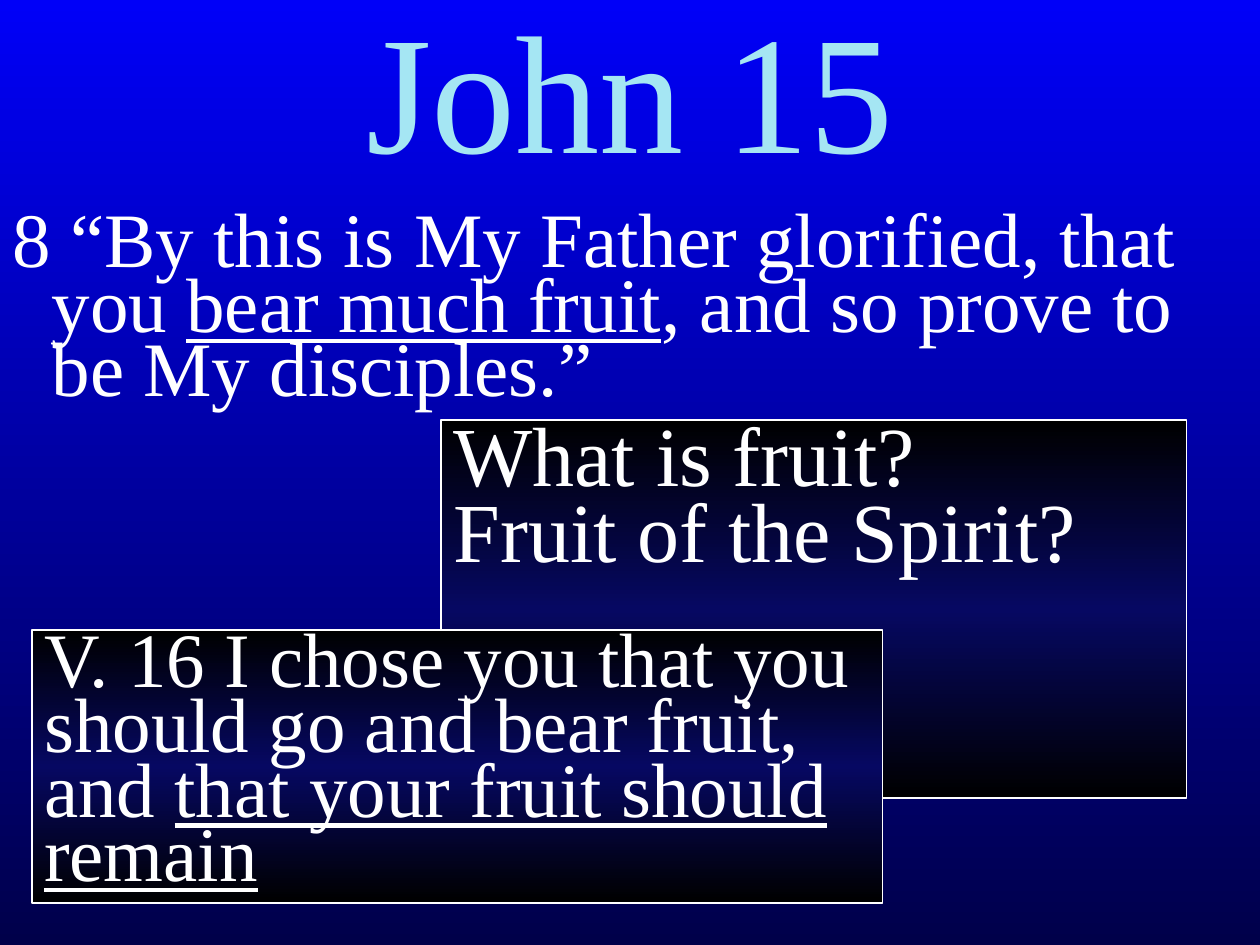
from copy import deepcopy

from pptx import Presentation
from pptx import util as u
from pptx.dml.color import RGBColor
from pptx.enum import shapes, text

WHITE = RGBColor(0xFF, 0xFF, 0xFF)
BLACK = RGBColor(0x00, 0x00, 0x00)
NAVY = RGBColor(0x06, 0x08, 0x62)
PALE_CYAN = RGBColor(0xA5, 0xE6, 0xF3)
SKY_TOP = RGBColor(0x00, 0x00, 0xF8)
SKY_BOTTOM = RGBColor(0x00, 0x00, 0x4A)
FONT = "Times New Roman"


def shade(fill, colours):
    """Fill from top to bottom with evenly spaced colours."""
    fill.gradient()
    fill.gradient_angle = 270
    stop_list = fill._fill._gradFill.gsLst
    while len(stop_list) < len(colours):
        stop_list.append(deepcopy(stop_list[-1]))
    for index, (stop, colour) in enumerate(zip(fill.gradient_stops, colours)):
        stop.position = index / (len(colours) - 1)
        stop.color.rgb = colour


def write(box, paragraphs, size, spacing, colour=WHITE, before=0,
          align=text.PP_ALIGN.LEFT, anchor=text.MSO_ANCHOR.TOP):
    """Write paragraphs given as lists of (words, underlined) runs."""
    frame = box.text_frame
    frame.word_wrap = True
    frame.vertical_anchor = anchor
    for index, runs in enumerate(paragraphs):
        para = frame.add_paragraph() if index else frame.paragraphs[0]
        para.alignment = align
        para.line_spacing = spacing
        para.space_before = u.Pt(before)
        for words, underlined in runs:
            span = para.add_run()
            span.text = words
            span.font.name = FONT
            span.font.size = u.Pt(size)
            span.font.color.rgb = colour
            if underlined:
                span.font.underline = True


deck = Presentation()
deck.slide_width, deck.slide_height = u.Cm(25.4), u.Cm(19.05)
page = deck.slides.add_slide(deck.slide_layouts[6])
shade(page.background.fill, [SKY_TOP, SKY_BOTTOM])

# Title
title = page.shapes.add_textbox(0, 0, u.Cm(25.4), u.Cm(4.23))
write(title, [[("John 15", False)]], 96, 0.8, PALE_CYAN,
      align=text.PP_ALIGN.CENTER, anchor=text.MSO_ANCHOR.MIDDLE)

# Verse with a hanging indent
verse = page.shapes.add_textbox(0, u.Cm(4.23), u.Cm(25.4), u.Cm(13.55))
write(verse, [[("8 “By this is My Father glorified, that you ", False),
               ("bear much fruit", True),
               (", and so prove to be My disciples.”", False)]],
      44, 0.7, before=7)
verse_format = verse.text_frame.paragraphs[0]._p.get_or_add_pPr()
verse_format.set("marL", str(u.Cm(0.79)))
verse_format.set("indent", str(-u.Cm(0.79)))

# Overlapping panels: place in cm, paragraphs, size, line spacing, space before
panels = [
    ((8.89, 8.47, 15.03, 7.62),
     [[("What is fruit?", False)], [("Fruit of the Spirit?", False)]],
     48, 0.75, 0),
    ((0.64, 12.7, 17.15, 5.5),
     [[("V. 16 I chose you that you should go and bear fruit, and ", False),
       ("that your fruit should remain", True)]],
     44, 0.7, 2),
]
for place, paragraphs, size, spacing, before in panels:
    panel = page.shapes.add_shape(shapes.MSO_SHAPE.RECTANGLE, *map(u.Cm, place))
    panel.shadow.inherit = False
    shade(panel.fill, [BLACK, NAVY, BLACK])
    panel.line.color.rgb = WHITE
    panel.line.width = u.Pt(1)
    write(panel, paragraphs, size, spacing, before=before)

deck.save("out.pptx")
